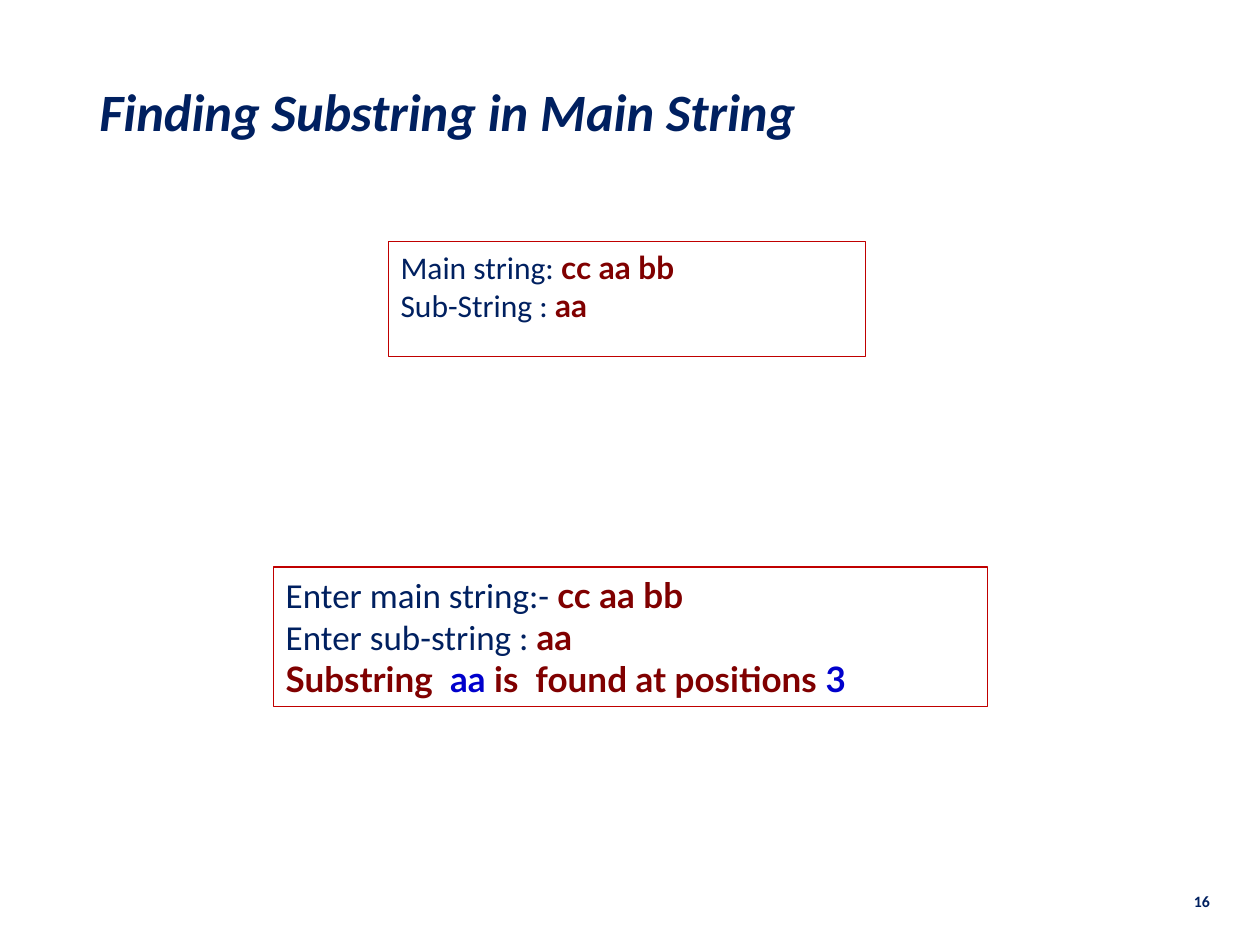
from dataclasses import dataclass

from pptx import Presentation
from pptx.dml.color import RGBColor
from pptx.enum import shapes, text
from pptx.util import Pt


@dataclass(frozen=True)
class Theme:
    navy: RGBColor = RGBColor(0x00, 0x20, 0x60)
    maroon: RGBColor = RGBColor(0x80, 0x00, 0x00)
    blue: RGBColor = RGBColor(0x00, 0x00, 0xCC)
    border: RGBColor = RGBColor(0xC0, 0x00, 0x00)
    title_size: int = 30
    input_size: int = 18
    output_size: int = 20
    number_size: int = 9


theme = Theme()
LABEL = {"name": "Calibri", "bold": False}
VALUE = {"name": "Lato", "bold": True}
STYLES = {
    "label": (LABEL, theme.navy),
    "value": (VALUE, theme.maroon),
    "match": (VALUE, theme.blue),
    "heading": ({"name": "Calibri", "bold": True, "italic": True}, theme.navy),
    "number": ({"name": "Calibri", "bold": True}, theme.navy),
}


def write(frame, lines, size, anchor):
    """Fill a frame with lines, each a list of (wording, style) runs."""
    frame.word_wrap = True
    frame.vertical_anchor = anchor
    for index, line in enumerate(lines):
        paragraph = frame.paragraphs[0] if index == 0 else frame.add_paragraph()
        paragraph.alignment = text.PP_ALIGN.LEFT
        for wording, style in line:
            run = paragraph.add_run()
            run.text = wording
            font_format, color = STYLES[style]
            for attribute, value in {**font_format, "size": Pt(size)}.items():
                setattr(run.font, attribute, value)
            run.font.color.rgb = color


presentation = Presentation()
presentation.slide_width, presentation.slide_height = Pt(720), Pt(540)
slide = presentation.slides.add_slide(presentation.slide_layouts[6])

# Title
title = slide.shapes.add_textbox(Pt(49.7), Pt(40.3), Pt(649.4), Pt(49.7)).text_frame
write(title, [[("Finding Substring in Main String", "heading")]],
      theme.title_size, text.MSO_ANCHOR.MIDDLE)
title.paragraphs[0].line_spacing = 0.9

# Example strings and the program's output
panels = [
    ((221.8, 138.2, 272.9, 65.5), theme.input_size, [
        [("Main string: ", "label"), ("cc aa bb", "value")],
        [("Sub-String : ", "label"), ("aa", "value")],
    ]),
    ((156.2, 324, 408.2, 79.9), theme.output_size, [
        [("Enter main string:- ", "label"), ("cc aa bb", "value")],
        [("Enter sub-string : ", "label"), ("aa", "value")],
        [("Substring  ", "value"), ("aa", "match"),
         (" is  found at positions ", "value"), ("3", "match")],
    ]),
]
for bounds, size, lines in panels:
    panel = slide.shapes.add_shape(shapes.MSO_SHAPE.RECTANGLE, *map(Pt, bounds))
    panel.shadow.inherit = False
    panel.fill.background()
    panel.line.color.rgb = theme.border
    panel.line.width = Pt(0.75)
    write(panel.text_frame, lines, size, text.MSO_ANCHOR.TOP)

# Slide number
number = slide.shapes.add_textbox(Pt(670.3), Pt(500.4), Pt(28.1), Pt(28.8)).text_frame
write(number, [[("16", "number")]], theme.number_size, text.MSO_ANCHOR.MIDDLE)
number.paragraphs[0].alignment = text.PP_ALIGN.RIGHT

presentation.save("out.pptx")
